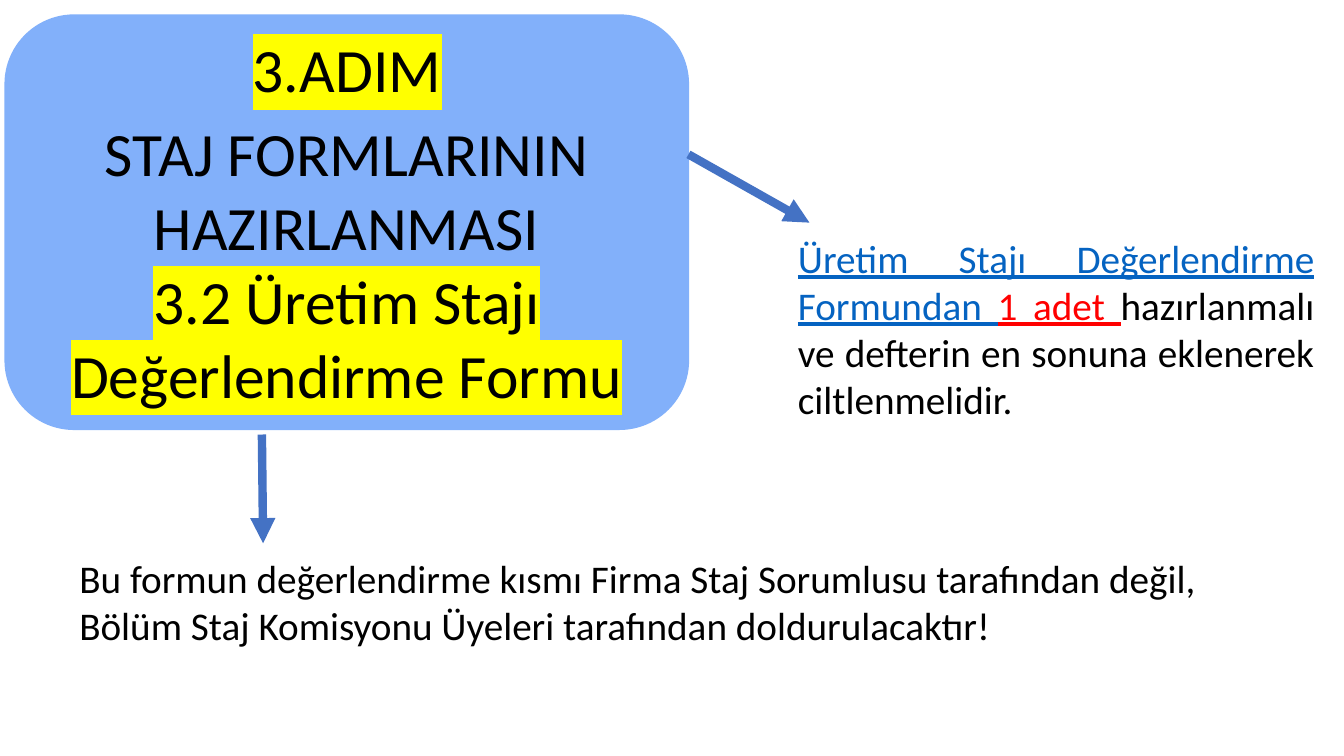
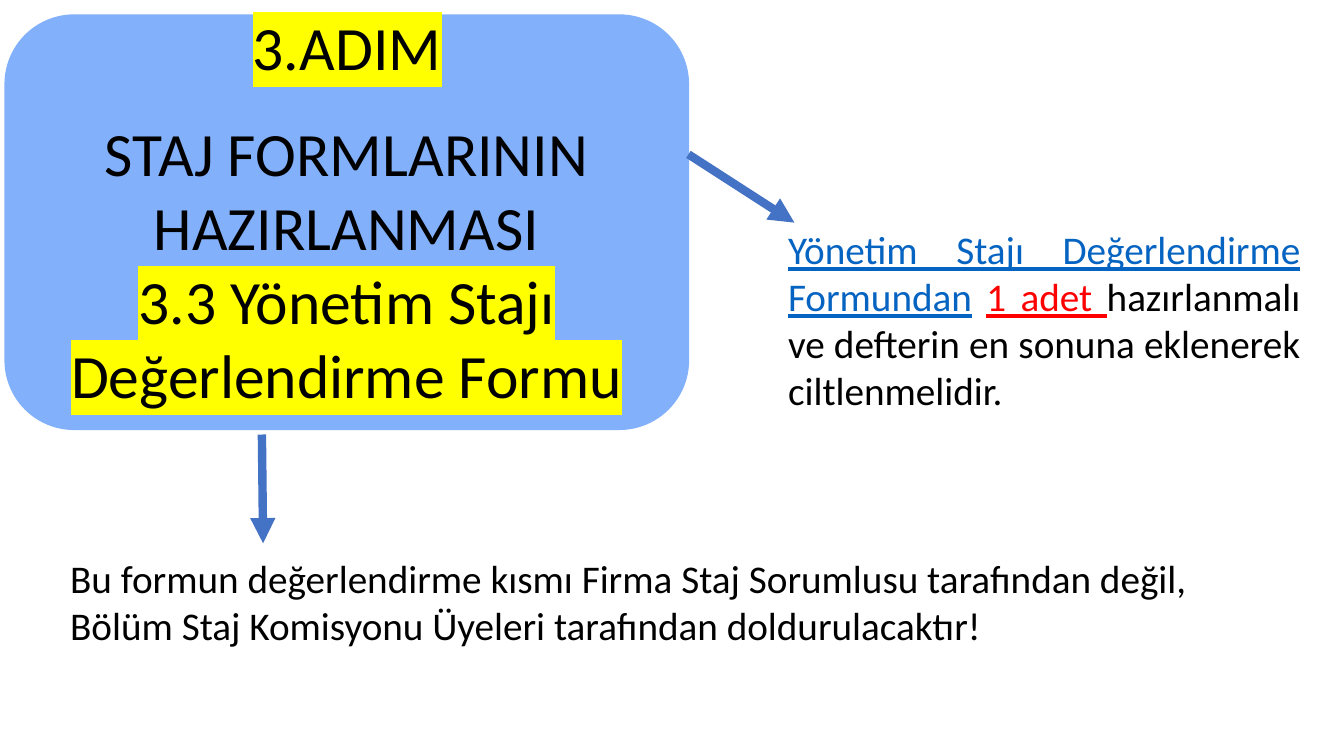
from lxml import etree
from pptx import Presentation
from pptx.dml.color import RGBColor
from pptx.enum.shapes import MSO_CONNECTOR, MSO_SHAPE
from pptx.enum.text import MSO_ANCHOR, MSO_AUTO_SIZE, PP_ALIGN
from pptx.oxml.ns import qn
from pptx.util import Cm, Pt

CENTER, JUSTIFY, LEFT = PP_ALIGN.CENTER, PP_ALIGN.JUSTIFY, PP_ALIGN.LEFT
MIDDLE, TOP = MSO_ANCHOR.MIDDLE, MSO_ANCHOR.TOP
NO_AUTOFIT = MSO_AUTO_SIZE.NONE
ROUNDED, STRAIGHT = MSO_SHAPE.ROUNDED_RECTANGLE, MSO_CONNECTOR.STRAIGHT

FONT = "Calibri"
BLACK, RED, LINK = "000000", "FF0000", "0563C1"
PANEL, ARROW, YELLOW = "82B0FA", "4472C4", "FFFF00"
HEADING_SIZE, BODY_SIZE, ARROW_WIDTH = 44, 28, 6
TITLE_ONLY = 5

# Lengths in centimetres
SLIDE_SIZE = (33.87, 19.05)
PANEL_BOX = (0.13, 0.38, 17.22, 10.44)
PANEL_TOP_INSET = 2.19
DOWN_ARROW = ((6.6, 10.95), (6.63, 13.69))
SIDE_ARROW_START = (17.35, 3.89)

STEP = "3.ADIM"
TOPIC = "STAJ FORMLARININ HAZIRLANMASI"
COUNT = ("1 adet ", {"color": RED, "underline": True})
INSTRUCTION = ("hazırlanmalı ve defterin en sonuna eklenerek ciltlenmelidir.", {})
NOTE = ("Bu formun değerlendirme kısmı Firma Staj Sorumlusu tarafından değil, "
        "Bölüm Staj Komisyonu Üyeleri tarafından doldurulacaktır!")
LINK_STYLE = {"color": LINK, "underline": True}

SLIDES = [
    {
        "form": "3.2 Üretim Stajı Değerlendirme Formu",
        "title_box": (5.59, 0, 6.32, 3.68),
        "instruction": [("Üretim Stajı Değerlendirme Formundan ", LINK_STYLE),
                        COUNT, INSTRUCTION],
        "instruction_box": (19.86, 5.77, 13.51, 5.05),
        "side_arrow_end": (20.4, 5.61),
        "note_box": (1.75, 13.84, 29.41, 2.64),
    },
    {
        "form": "3.3 Yönetim Stajı Değerlendirme Formu",
        "title_box": (5.59, -0.56, 6.32, 3.68),
        "instruction": [("Yönetim Stajı Değerlendirme Formundan", LINK_STYLE),
                        (" ", {}), COUNT, INSTRUCTION],
        "instruction_box": (19.61, 5.56, 13.41, 5.05),
        "side_arrow_end": (20.02, 5.61),
        "note_box": (1.52, 13.84, 29.41, 2.64),
    },
]


def rgb(value):
    return RGBColor.from_string(value)


def lengths(values):
    return [Cm(value) for value in values]


def add_span(para, text, size=BODY_SIZE, color=BLACK, underline=False, highlight=None):
    span = para.add_run()
    span.text = text
    font = span.font
    font.name, font.size, font.underline = FONT, Pt(size), underline
    font.color.rgb = rgb(color)
    if highlight:
        mark = etree.Element(qn("a:highlight"))
        etree.SubElement(mark, qn("a:srgbClr"), val=highlight)
        span.font.fill  # the highlight must follow the text fill
        span.font._element.find(qn("a:solidFill")).addnext(mark) if hasattr(
            span.font, "_element") else span._r.rPr.find(qn("a:solidFill")).addnext(mark)


def write(shape, paragraphs, align=LEFT, anchor=TOP, line_spacing=None):
    """Fill a shape with paragraphs, each a list of (text, format) spans."""
    frame = shape.text_frame
    frame.word_wrap = True
    frame.auto_size = NO_AUTOFIT
    frame.vertical_anchor = anchor
    for index, spans in enumerate(paragraphs):
        para = frame.add_paragraph() if index else frame.paragraphs[0]
        para.alignment = align
        if line_spacing:
            para.line_spacing = line_spacing
        for text, style in spans:
            add_span(para, text, **style)


def add_panel(slide, form):
    panel = slide.shapes.add_shape(ROUNDED, *lengths(PANEL_BOX))
    panel.shadow.inherit = False
    panel.fill.solid()
    panel.fill.fore_color.rgb = rgb(PANEL)
    panel.line.color.rgb = rgb(PANEL)
    panel.line.width = Pt(1)
    panel.text_frame.margin_top = Cm(PANEL_TOP_INSET)
    write(panel, [[(TOPIC, {"size": HEADING_SIZE})],
                  [(form, {"size": HEADING_SIZE, "highlight": YELLOW})]],
          align=CENTER, anchor=MIDDLE)


def place_title(slide, box):
    title = slide.shapes.title
    title.left, title.top, title.width, title.height = lengths(box)
    write(title, [[(STEP, {"size": HEADING_SIZE, "highlight": YELLOW})]],
          align=CENTER, anchor=MIDDLE, line_spacing=0.9)
    slide.shapes.element.append(title.element)  # bring in front of the panel


def add_text(slide, box, spans, align=LEFT):
    write(slide.shapes.add_textbox(*lengths(box)), [spans], align=align)


def add_arrow(slide, start, end):
    arrow = slide.shapes.add_connector(STRAIGHT, *lengths(start + end))
    arrow.line.color.rgb = rgb(ARROW)
    arrow.line.width = Pt(ARROW_WIDTH)
    etree.SubElement(arrow.line._get_or_add_ln(), qn("a:tailEnd"), type="triangle")
    etree.SubElement(arrow.element.spPr, qn("a:effectLst"))


def build_slide(deck, content):
    slide = deck.slides.add_slide(deck.slide_layouts[TITLE_ONLY])
    add_panel(slide, content["form"])
    place_title(slide, content["title_box"])
    add_text(slide, content["instruction_box"], content["instruction"], align=JUSTIFY)
    add_arrow(slide, SIDE_ARROW_START, content["side_arrow_end"])
    add_arrow(slide, *DOWN_ARROW)
    add_text(slide, content["note_box"], [(NOTE, {})])


def main():
    deck = Presentation()
    deck.slide_width, deck.slide_height = lengths(SLIDE_SIZE)
    for content in SLIDES:
        build_slide(deck, content)
    deck.save("out.pptx")


if __name__ == "__main__":
    main()
